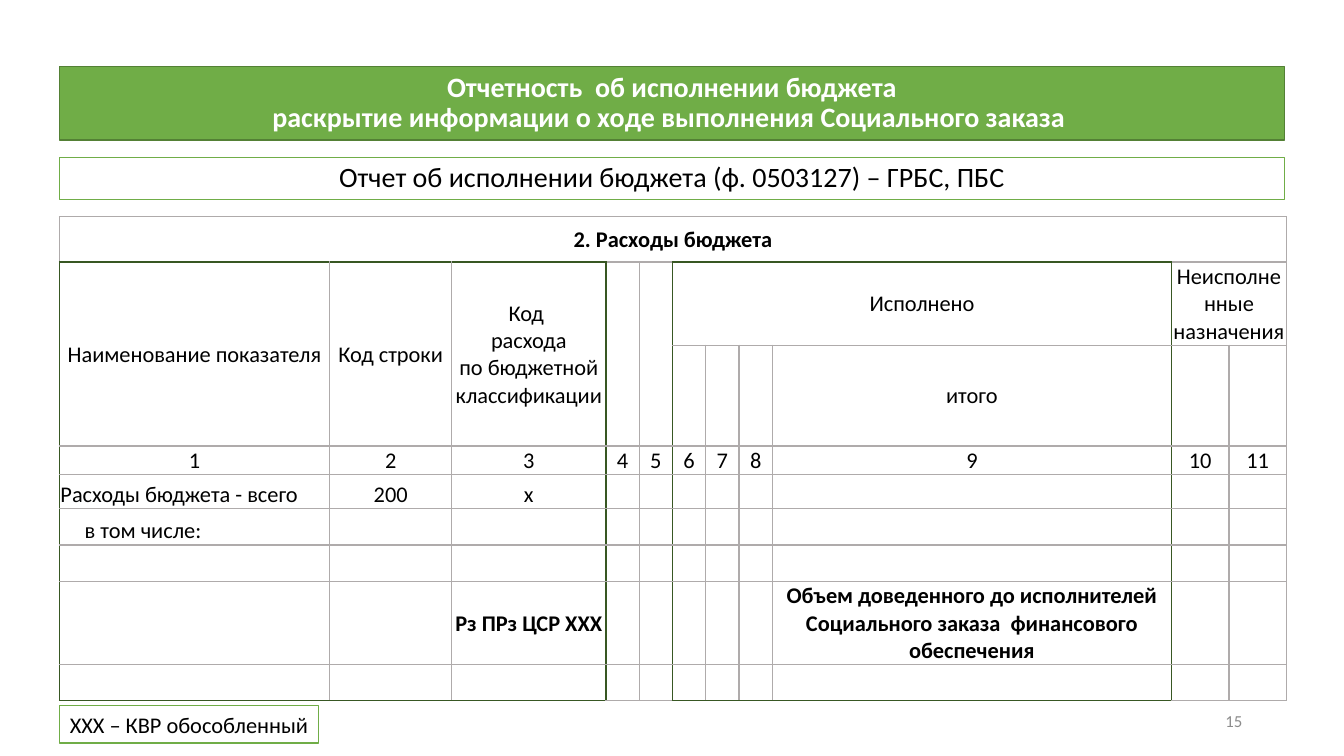
from pptx import Presentation
from pptx.dml.color import RGBColor
from pptx.enum.shapes import MSO_SHAPE
from pptx.enum.text import MSO_ANCHOR, PP_ALIGN
from pptx.oxml.ns import qn
from pptx.util import Inches, Pt
from lxml.etree import SubElement

THEME = {
    "font": "Calibri",
    "heading": 20, "body": 16, "page_number": 12,
    "green": "70AD47", "green_edge": "538035",
    "dark_rule": "385723", "light_rule": "AFABAB",
    "white": "FFFFFF", "black": "000000", "grey": "8C8C8C",
}

TITLE = "Отчетность  об исполнении бюджета\nраскрытие информации о ходе выполнения Социального заказа "
SUBTITLE = "Отчет об исполнении бюджета (ф. 0503127) – ГРБС, ПБС"
FOOTNOTE = "ХХХ – КВР обособленный"
PAGE_NUMBER = "15"

LEFT, WIDTH = 0.59, 12.15
TABLE_TOP = 2.15
COLUMN_WIDTHS = [2.68, 1.21, 1.53] + [0.33] * 5 + [3.96, 0.57, 0.57]
ROW_HEIGHTS = [0.45, 0.82, 1, 0.27, 0.34, 0.36, 0.36, 0.82, 0.36]
LAST_ROW = len(ROW_HEIGHTS) - 1
LAST_COLUMN = len(COLUMN_WIDTHS) - 1

# (first row, first column, last row, last column)
MERGES = [(0, 0, 0, LAST_COLUMN), (1, 5, 1, 8), (1, 9, 1, 10)]
MERGES += [(1, column, 2, column) for column in range(5)]
DARK_BLOCKS = [(0, 2), (5, 8)]

# (row, column): text
CELL_TEXT = {
    (0, 0): "2. Расходы бюджета",
    (1, 0): "Наименование показателя",
    (1, 1): "Код строки",
    (1, 2): "Код \nрасхода\nпо бюджетной классификации",
    (1, 5): "Исполнено",
    (1, 9): "Неисполненные\nназначения",
    (2, 8): "итого",
    (4, 0): "Расходы бюджета - всего",
    (4, 1): "200",
    (4, 2): "х",
    (5, 0): "в том числе:",
    (7, 2): "Рз ПРз ЦСР ХХХ",
    (7, 8): "Объем доведенного до исполнителей Социального заказа  финансового обеспечения",
}
CELL_TEXT.update({(3, column): str(column + 1) for column in range(LAST_COLUMN + 1)})
BOLD_ROWS = {0, 7}
ROW_ANCHORS = {3: MSO_ANCHOR.TOP, 4: MSO_ANCHOR.BOTTOM, 5: MSO_ANCHOR.BOTTOM}
LEFT_ALIGNED = {(4, 0), (5, 0)}
INDENTED = (5, 0)


def color(name):
    return RGBColor.from_string(THEME[name])


def write(frame, text, size, ink, bold=False, align=PP_ALIGN.CENTER, spacing=None):
    para = frame.paragraphs[0]
    para.alignment = align
    if spacing:
        para.line_spacing = spacing
    for index, line in enumerate(text.split("\n")):
        if index:
            para.add_line_break()
        span = para.add_run()
        span.text = line
        span.font.name = THEME["font"]
        span.font.size = Pt(THEME[size])
        span.font.bold = bold
        span.font.color.rgb = color(ink)


def add_box(page, place, fill, edge):
    box = page.shapes.add_shape(MSO_SHAPE.RECTANGLE, *map(Inches, place))
    box.shadow.inherit = False
    box.fill.solid()
    box.fill.fore_color.rgb = color(fill)
    box.line.color.rgb = color(edge)
    box.line.width = Pt(1)
    box.text_frame.vertical_anchor = MSO_ANCHOR.MIDDLE
    return box


def set_borders(cell, row, column):
    """Dark rules frame the blocks of columns below the heading row; the rest are light."""
    in_block = any(first <= column <= last for first, last in DARK_BLOCKS)
    below_heading = row > 0
    dark = {
        "a:lnL": below_heading and column in (0, 3, 5, 9),
        "a:lnR": below_heading and column in (2, 4, 8),
        "a:lnT": row == 1 and in_block,
        "a:lnB": row in (0, LAST_ROW) and in_block,
    }
    properties = cell._tc.get_or_add_tcPr()
    for tag, is_dark in dark.items():
        line = SubElement(properties, qn(tag), w=str(Pt(1)))
        fill = SubElement(line, qn("a:solidFill"))
        rule = "dark_rule" if is_dark else "light_rule"
        SubElement(fill, qn("a:srgbClr"), val=THEME[rule])


def add_budget_table(page):
    holder = page.shapes.add_table(
        len(ROW_HEIGHTS), len(COLUMN_WIDTHS), Inches(LEFT), Inches(TABLE_TOP),
        Inches(WIDTH), Inches(sum(ROW_HEIGHTS)))
    table = holder.table
    table.first_row = False
    table.horz_banding = False
    for column, width in enumerate(COLUMN_WIDTHS):
        table.columns[column].width = Inches(width)
    for row, height in enumerate(ROW_HEIGHTS):
        table.rows[row].height = Inches(height)
        for column in range(len(COLUMN_WIDTHS)):
            cell = table.cell(row, column)
            place = (row, column)
            cell.margin_left = Inches(0.25 if place == INDENTED else 0.01)
            cell.margin_right = cell.margin_top = Inches(0.01)
            cell.margin_bottom = 0
            cell.vertical_anchor = ROW_ANCHORS.get(row, MSO_ANCHOR.MIDDLE)
            set_borders(cell, row, column)
            cell.fill.background()
            if place in CELL_TEXT:
                align = PP_ALIGN.LEFT if place in LEFT_ALIGNED else PP_ALIGN.CENTER
                write(cell.text_frame, CELL_TEXT[place], "body", "black",
                      row in BOLD_ROWS, align)
    for top, left, bottom, right in MERGES:
        table.cell(top, left).merge(table.cell(bottom, right))


def main():
    deck = Presentation()
    deck.slide_width, deck.slide_height = Inches(13.33), Inches(7.5)
    page = deck.slides.add_slide(deck.slide_layouts[6])

    title = add_box(page, (LEFT, 0.66, WIDTH, 0.73), "green", "green_edge")
    write(title.text_frame, TITLE, "heading", "white", bold=True, spacing=0.9)
    subtitle = add_box(page, (LEFT, 1.56, WIDTH, 0.42), "white", "green")
    write(subtitle.text_frame, SUBTITLE, "heading", "black", spacing=0.9)

    add_budget_table(page)

    footnote = add_box(page, (LEFT, 7, 2.57, 0.37), "white", "green")
    footnote.text_frame.word_wrap = False
    write(footnote.text_frame, FOOTNOTE, "body", "black")

    number = page.shapes.add_textbox(*map(Inches, (9.42, 6.95, 3, 0.4)))
    number.text_frame.word_wrap = True
    number.text_frame.vertical_anchor = MSO_ANCHOR.MIDDLE
    write(number.text_frame, PAGE_NUMBER, "page_number", "grey", align=PP_ALIGN.RIGHT)

    deck.save("out.pptx")


if __name__ == "__main__":
    main()
